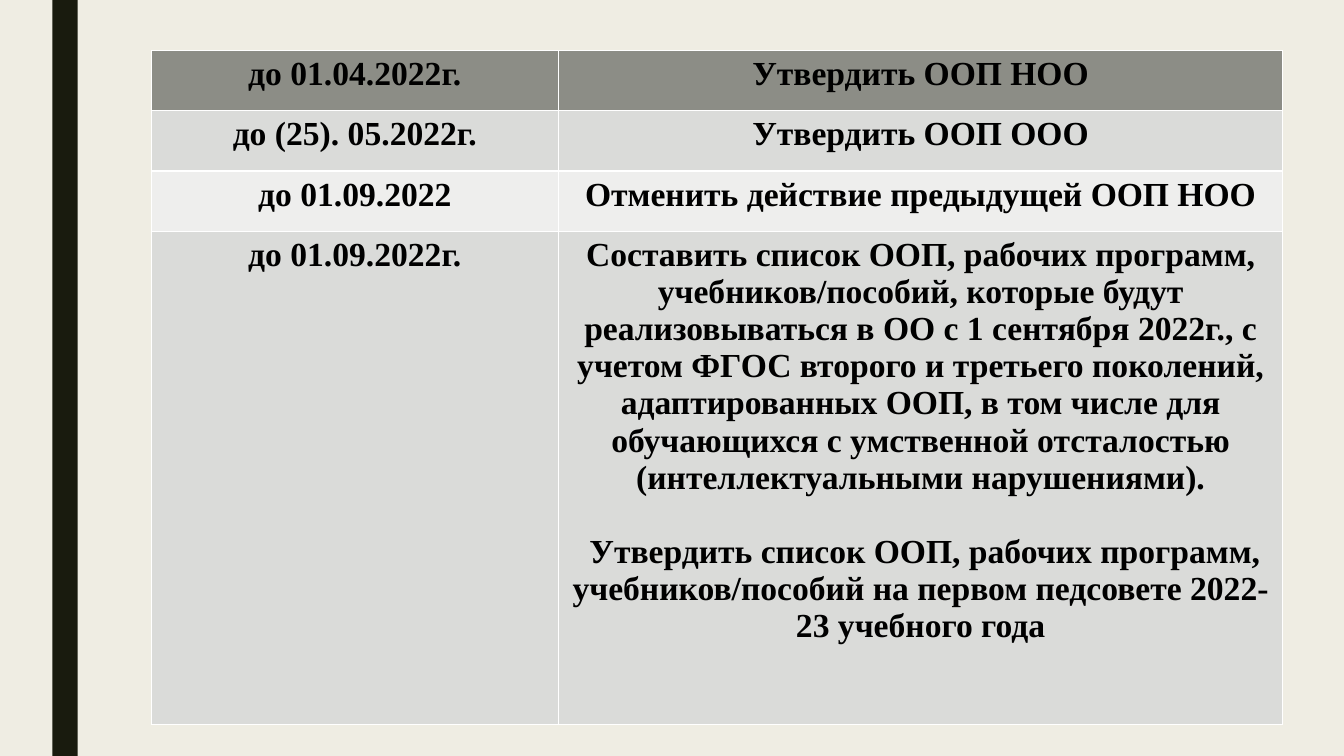
import dataclasses
import pptx
import pptx.dml.color
import pptx.enum.shapes
import pptx.enum.text
import pptx.util

Cm = pptx.util.Cm
Pt = pptx.util.Pt


@dataclasses.dataclass(frozen=True)
class Theme:
    back: str = "EFEDE3"
    bar: str = "191B0E"
    head: str = "8C8D86"
    bands: tuple = ("DADBD9", "EEEEED")
    ink: str = "000000"
    font: str = "Times New Roman"
    size: float = 24
    gap: float = 26.6


class Page:
    def __init__(self, deck, theme):
        self.theme = theme
        self.slide = deck.slides.add_slide(deck.slide_layouts[6])
        self.paint(self.slide.background.fill, theme.back)

    def paint(self, fill, shade):
        fill.solid()
        fill.fore_color.rgb = pptx.dml.color.RGBColor.from_string(shade)

    def bar(self, left, top, width, height):
        kind = pptx.enum.shapes.MSO_SHAPE.RECTANGLE
        shape = self.slide.shapes.add_shape(kind, Cm(left), Cm(top), Cm(width), Cm(height))
        shape.shadow.inherit = False
        shape.line.fill.background()
        self.paint(shape.fill, self.theme.bar)

    def label(self, cell, text):
        frame = cell.text_frame
        frame.text = text
        for index, para in enumerate(frame.paragraphs):
            para.alignment = pptx.enum.text.PP_ALIGN.CENTER
            if index:
                para.space_before = Pt(self.theme.gap)
            for run in para.runs:
                run.font.name = self.theme.font
                run.font.size = Pt(self.theme.size)
                run.font.bold = True
                self.paint(run.font.fill, self.theme.ink)

    def table(self, left, top, widths, heights, rows):
        grid = self.slide.shapes.add_table(
            len(rows), len(widths), Cm(left), Cm(top), Cm(sum(widths)), Cm(sum(heights))
        ).table
        for column, width in zip(grid.columns, widths):
            column.width = Cm(width)
        for index, (row, height, texts) in enumerate(zip(grid.rows, heights, rows)):
            row.height = Cm(height)
            shade = self.theme.bands[(index - 1) % 2] if index else self.theme.head
            for cell, text in zip(row.cells, texts):
                self.paint(cell.fill, shade)
                self.label(cell, text)


TASKS = [
    ("до 01.04.2022г.", "Утвердить ООП НОО"),
    ("до (25). 05.2022г.", "Утвердить ООП ООО"),
    ("до 01.09.2022", "Отменить действие предыдущей ООП НОО"),
    (
        "до 01.09.2022г.",
        "Составить список ООП, рабочих программ, учебников/пособий, которые будут "
        "реализовываться в ОО с 1 сентября 2022г., с учетом ФГОС второго и третьего "
        "поколений, адаптированных ООП, в том числе для обучающихся с умственной "
        "отсталостью (интеллектуальными нарушениями).\n"
        " Утвердить список ООП, рабочих программ, учебников/пособий на первом "
        "педсовете 2022-23 учебного года",
    ),
]


def main():
    deck = pptx.Presentation()
    deck.slide_width = Cm(33.87)
    deck.slide_height = Cm(19.05)
    page = Page(deck, Theme())
    page.bar(1.32, 0, 0.64, 19.05)
    page.table(3.81, 1.27, [10.26, 18.26], [1.52] * 3 + [12.42], TASKS)
    deck.save("out.pptx")


if __name__ == "__main__":
    main()
